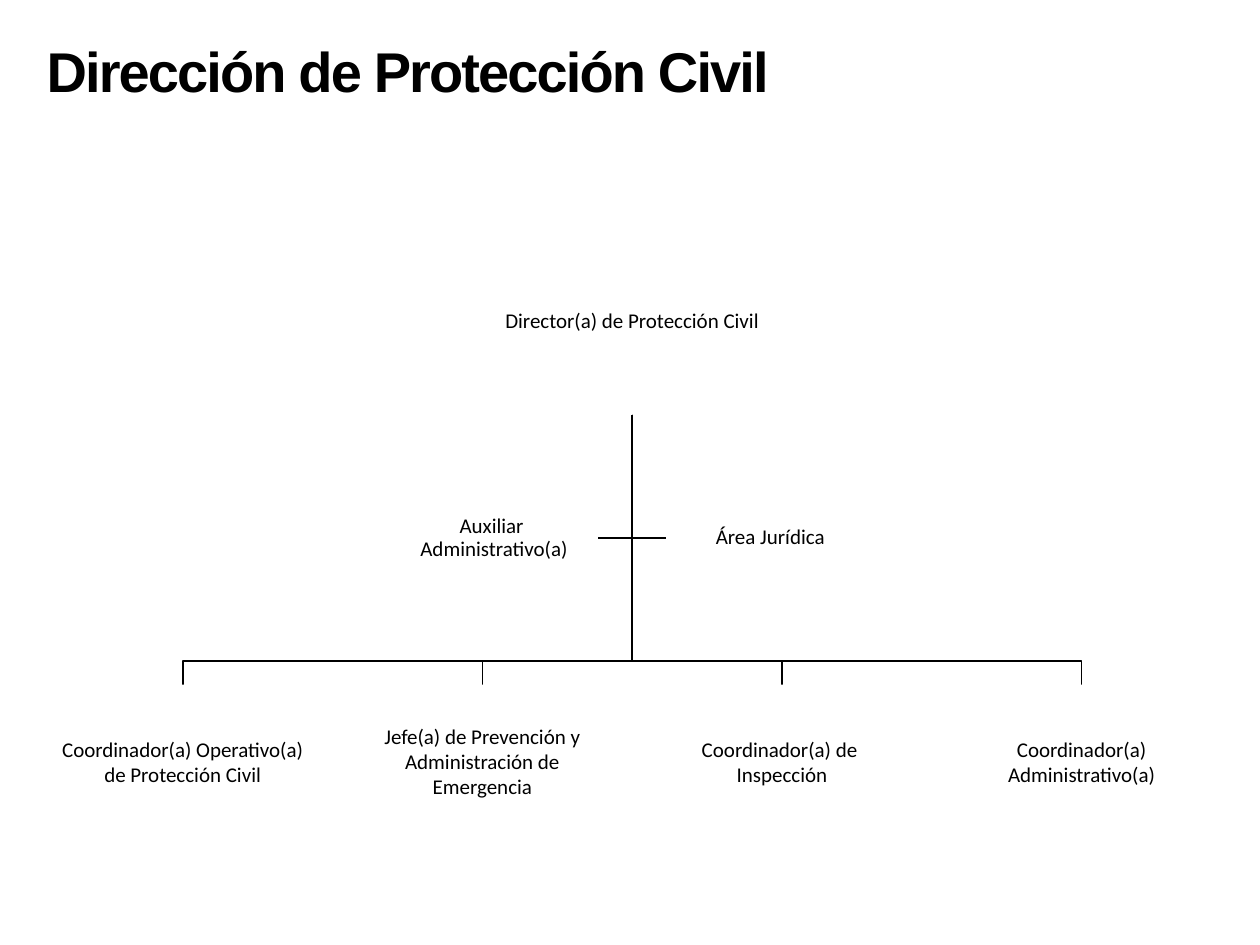
import pptx
import pptx.dml.color
import pptx.enum.shapes
import pptx.enum.text
import pptx.util

Cm = pptx.util.Cm
Pt = pptx.util.Pt


def color(value):
    return pptx.dml.color.RGBColor.from_string(value)


class Chart:
    ink = "000000"
    paper = "FFFFFF"
    inset = Cm(0.03)

    def __init__(self, slide):
        self.slide = slide

    def title(self, text, x, y, w, h):
        sp = self.slide.shapes.add_textbox(Cm(x), Cm(y), Cm(w), Cm(h))
        tf = sp.text_frame
        tf.word_wrap = True
        tf.auto_size = pptx.enum.text.MSO_AUTO_SIZE.SHAPE_TO_FIT_TEXT
        p = tf.paragraphs[0]
        r = p.add_run()
        r.text = text
        r._r.get_or_add_rPr().set("spc", "-110")
        self.font(p, "Arial", 32, True)

    def font(self, p, name, size, bold=False):
        p.font.name = name
        p.font.size = Pt(size)
        p.font.bold = bold
        p.font.color.rgb = color(self.ink)

    def label(self, sp, text, line_spacing=None):
        tf = sp.text_frame
        tf.word_wrap = True
        tf.vertical_anchor = pptx.enum.text.MSO_ANCHOR.MIDDLE
        tf.margin_left = tf.margin_right = self.inset
        tf.margin_top = tf.margin_bottom = self.inset
        p = tf.paragraphs[0]
        p.text = text
        p.alignment = pptx.enum.text.PP_ALIGN.CENTER
        p.line_spacing = line_spacing
        self.font(p, "Calibri", 12)

    def head(self, text, x, y, w, h):
        sp = self.slide.shapes.add_textbox(Cm(x), Cm(y), Cm(w), Cm(h))
        self.label(sp, text)

    def box(self, text, x, y, w, h, line_spacing=None):
        sp = self.slide.shapes.add_shape(
            pptx.enum.shapes.MSO_SHAPE.RECTANGLE, Cm(x), Cm(y), Cm(w), Cm(h))
        sp.shadow.inherit = False
        sp.fill.solid()
        sp.fill.fore_color.rgb = color(self.paper)
        sp.line.fill.background()
        self.label(sp, text, line_spacing)

    def branch(self, *points):
        start, *rest = [(Cm(x), Cm(y)) for x, y in points]
        builder = self.slide.shapes.build_freeform(*start)
        builder.add_line_segments(rest, close=False)
        sp = builder.convert_to_shape()
        sp.shadow.inherit = False
        sp.fill.background()
        sp.line.color.rgb = color(self.ink)
        sp.line.width = Pt(1)


def main():
    prs = pptx.Presentation()
    prs.slide_width, prs.slide_height = Cm(25.4), Cm(19.05)
    s = prs.slides.add_slide(prs.slide_layouts[6])
    chart = Chart(s)

    coordinators = [
        "Coordinador(a) Operativo(a) de Protección Civil",
        "Jefe(a) de Prevención y Administración de Emergencia",
        "Coordinador(a) de \nInspección",
        "Coordinador(a) Administrativo(a)",
    ]
    left, pitch, box_w, box_h = 1.12, 6.04, 5.13, 3.1
    box_y, bus_y = 13.8, 13.33
    center = left + (pitch * (len(coordinators) - 1) + box_w) / 2
    head_w, head_y, head_h = 6.7, 4.55, 3.81
    head_bottom = head_y + head_h
    staff_w, staff_h, staff_y, gap = 4.19, 2.39, 9.65, 0.69
    staff_mid = staff_y + staff_h / 2
    columns = [left + pitch * i for i in range(len(coordinators))]

    chart.title("Dirección de Protección Civil", 0.69, 0.61, 20.22, 1.63)
    for side in (1, -1):
        chart.branch((center, head_bottom), (center, staff_mid),
                     (center + side * gap, staff_mid))
    for x in reversed(columns):
        mid = x + box_w / 2
        chart.branch((center, head_bottom), (center, bus_y),
                     (mid, bus_y), (mid, box_y))

    chart.head("Director(a) de Protección Civil",
               center - head_w / 2, head_y, head_w, head_h)
    for x, text in zip(columns, coordinators):
        chart.box(text, x, box_y, box_w, box_h)
    for text, x in (("Auxiliar \nAdministrativo(a)", center - gap - staff_w),
                    ("Área Jurídica", center + gap)):
        chart.box(text, x, staff_y, staff_w, staff_h, 0.9)

    prs.save("out.pptx")


if __name__ == "__main__":
    main()
